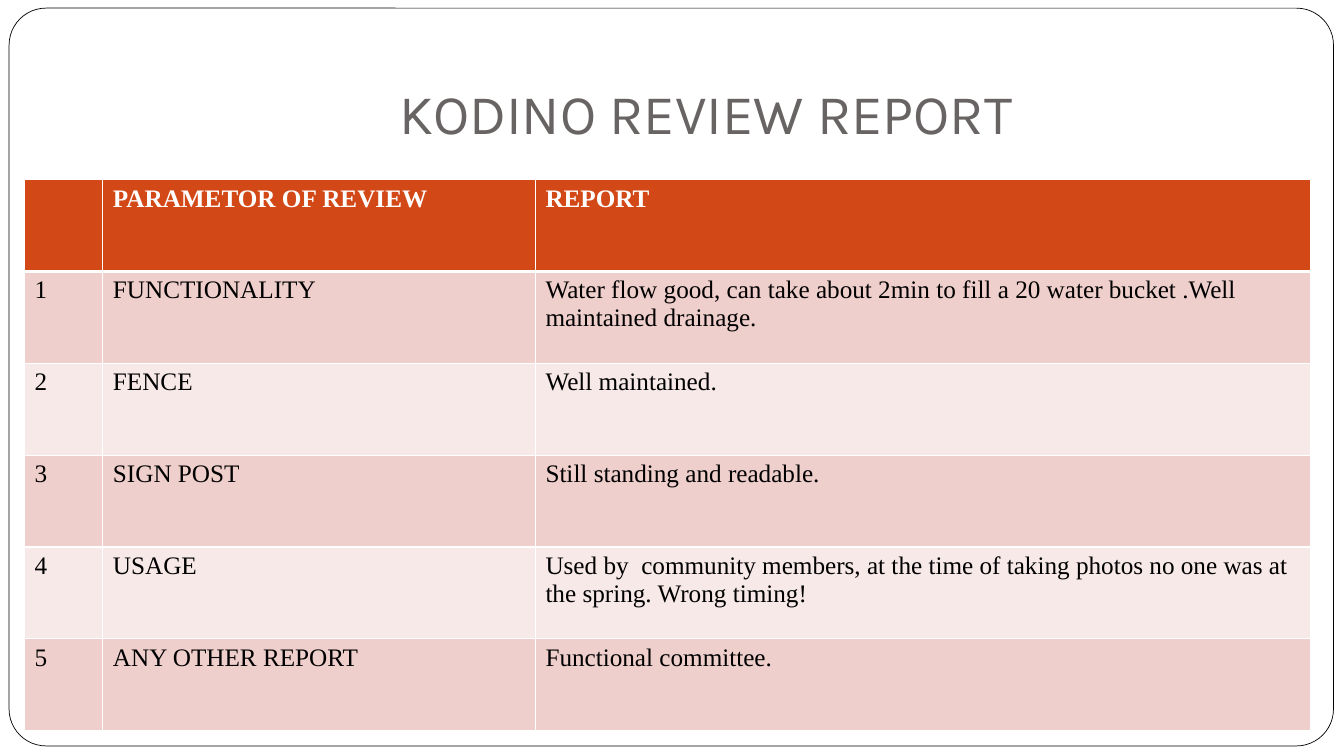
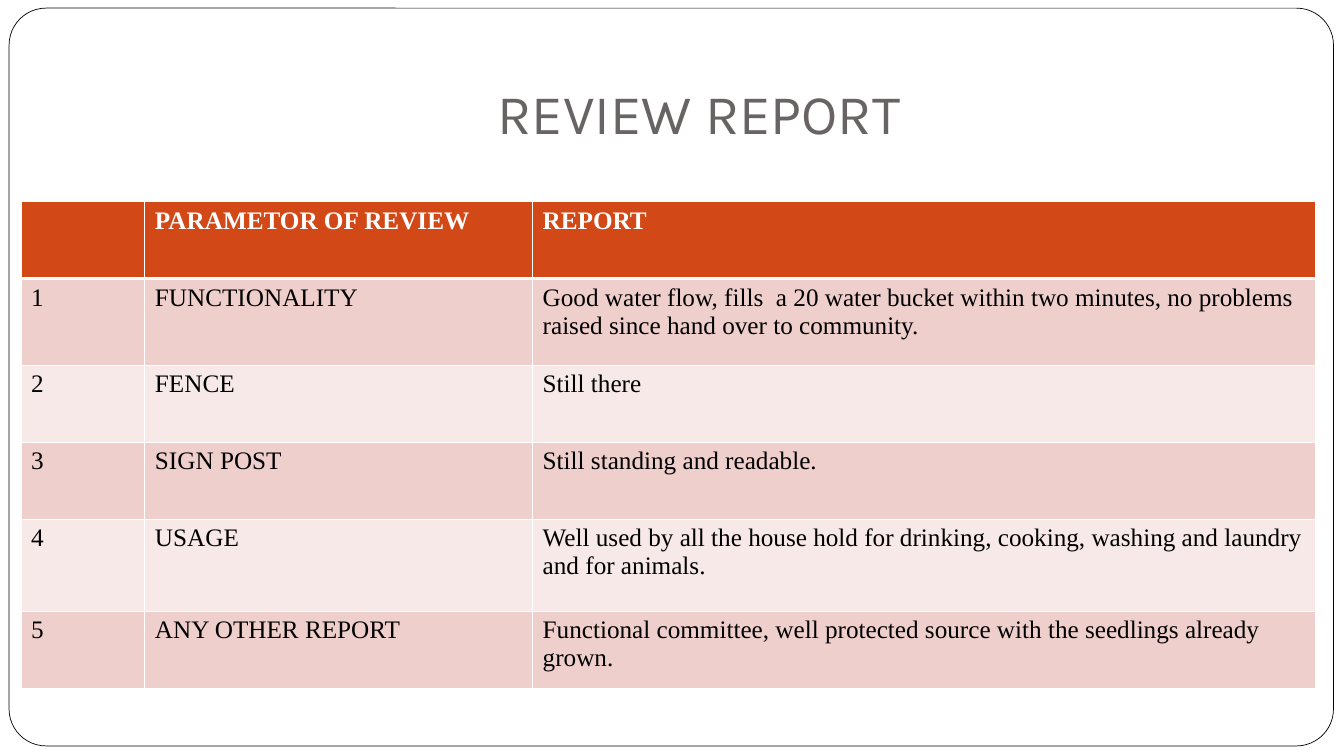
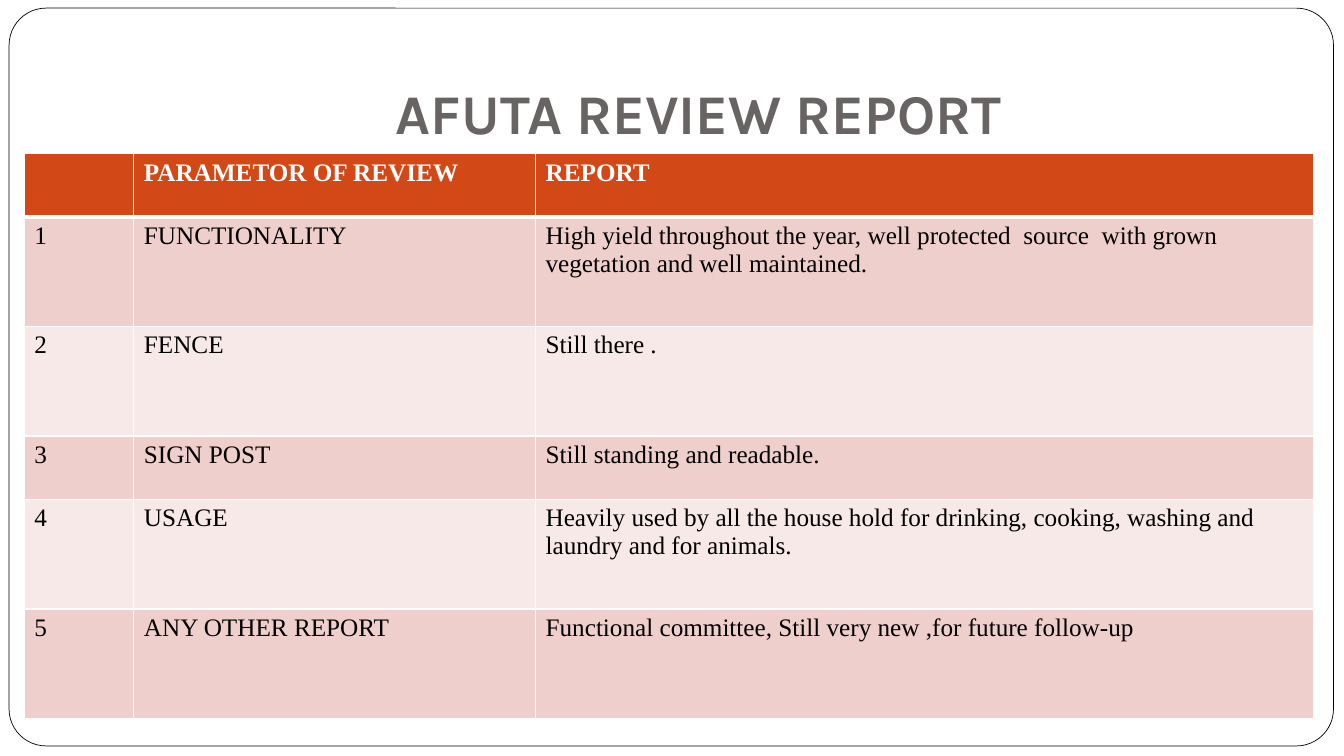
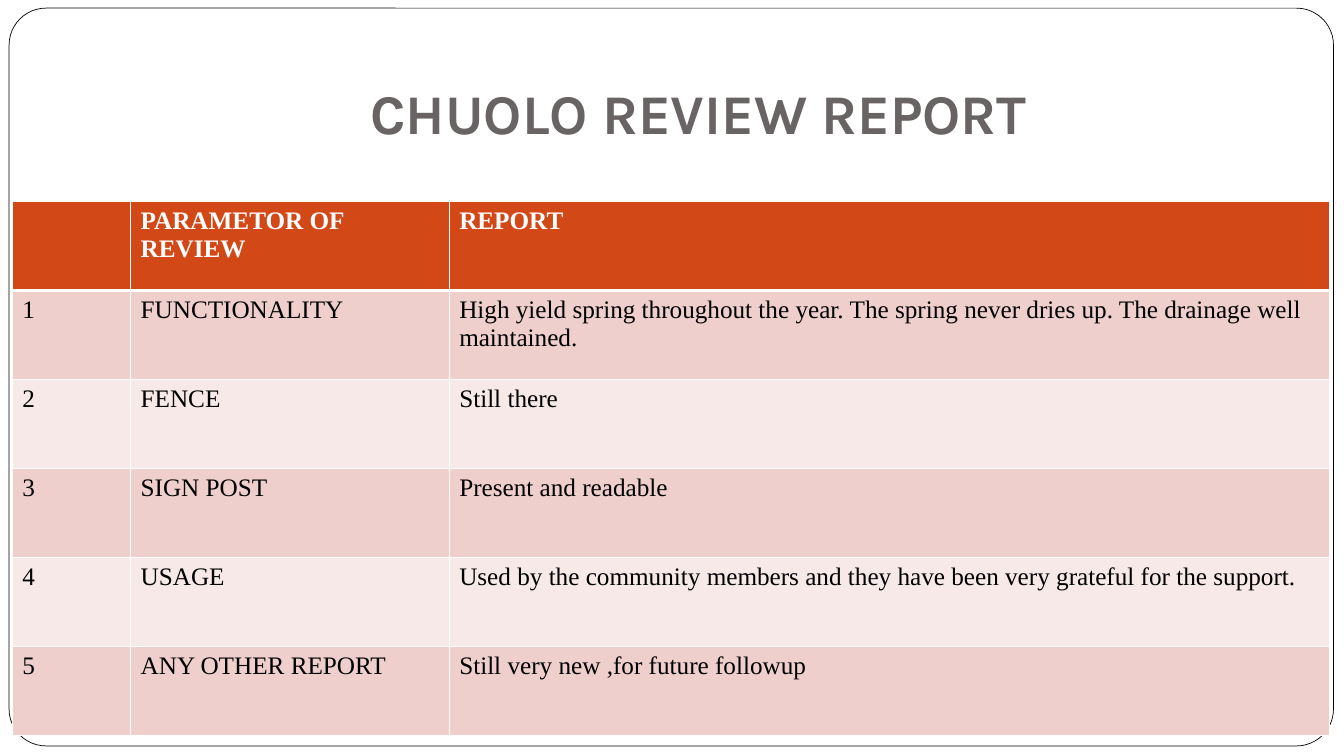
from dataclasses import dataclass

from lxml import etree
from pptx import Presentation
from pptx.dml.color import RGBColor
from pptx.enum import shapes, text
from pptx.oxml import ns
from pptx.util import Pt

WHITE = RGBColor(0xFF, 0xFF, 0xFF)
BLACK = RGBColor(0x00, 0x00, 0x00)
GREY = RGBColor(0x69, 0x64, 0x64)
RUST = RGBColor(0xD3, 0x48, 0x17)
ROSE = RGBColor(0xEF, 0xCF, 0xCC)
BLUSH = RGBColor(0xF7, 0xE9, 0xE8)

HEAD = ("", "PARAMETOR OF REVIEW", "REPORT")
TOPICS = ("FUNCTIONALITY", "FENCE", "SIGN POST", "USAGE", "ANY OTHER REPORT")
THIN, THICK = 1, 3


@dataclass(frozen=True)
class Review:
    title: str
    bold: bool
    left: float
    top: float
    cols: tuple[float, ...]
    rows: tuple[float, ...]
    notes: tuple[str, ...]


REVIEWS = (
    Review(
        "KODINO REVIEW REPORT", False, 17.5, 128.3,
        (56, 309, 553.5), (65.6,) * 6,
        (
            "Water flow good, can take about 2min to fill a 20 water bucket .Well maintained drainage.",
            "Well maintained.",
            "Still standing and readable.",
            "Used by  community members, at the time of taking photos no one was at the spring. Wrong timing!",
            "Functional committee.",
        ),
    ),
    Review(
        "REVIEW REPORT ", False, 15, 144,
        (88.5, 277, 559), (55, 62, 55, 55, 65.6, 55),
        (
            "Good water flow, fills  a 20 water bucket within two minutes, no problems raised since hand over to community.",
            "Still there",
            "Still standing and readable.",
            "Well used by all the house hold for drinking, cooking, washing and laundry and for animals.",
            "Functional committee, well protected source with the seedlings already grown.",
        ),
    ),
    Review(
        "AFUTA REVIEW REPORT ", True, 17.3, 109.7,
        (78.3, 287, 556), (45.2, 78.3, 78.3, 45.2, 78.3, 78.3),
        (
            "High yield throughout the year, well protected  source  with grown vegetation and well maintained.",
            "Still there .",
            "Still standing and readable.",
            "Heavily used by all the house hold for drinking, cooking, washing and laundry and for animals.",
            "Functional committee, Still very new ,for future follow-up",
        ),
    ),
    Review(
        "CHUOLO REVIEW REPORT ", True, 8.8, 144,
        (84.5, 227.6, 629), (63.6,) * 6,
        (
            "High yield spring throughout the year. The spring never dries up. The drainage well maintained.",
            "Still there",
            "Present and readable",
            "Used by the community members and they have been very grateful for the support.",
            "Still very new ,for future followup",
        ),
    ),
)


def add_run(para, words: str, font: str, size: float, color: RGBColor, bold: bool) -> None:
    run = para.add_run()
    run.text = words
    run.font.name = font
    run.font.size = Pt(size)
    run.font.bold = bold
    run.font.color.rgb = color


def set_layout(layout) -> None:
    """Place and format the title that every slide inherits."""
    title = next(p for p in layout.placeholders
                 if p.placeholder_format.type == shapes.PP_PLACEHOLDER.TITLE)
    title.left, title.top, title.width, title.height = map(Pt, (96, 21.6, 816, 90))
    frame = title.text_frame
    frame.vertical_anchor = text.MSO_ANCHOR.BOTTOM
    frame.auto_size = text.MSO_AUTO_SIZE.NONE
    frame.margin_left = frame.margin_right = frame.margin_bottom = Pt(7.2)
    frame.margin_top = Pt(3.6)


def add_frame(slide, layout) -> None:
    """Draw the rounded frame and move it to the back of the shared layout."""
    frame = slide.shapes.add_shape(
        shapes.MSO_SHAPE.ROUNDED_RECTANGLE, *map(Pt, (6.5, 5.8, 946, 527)))
    frame.adjustments[0] = 0.05
    frame.shadow.inherit = False
    frame.fill.solid()
    frame.fill.fore_color.rgb = WHITE
    frame.line.color.rgb = BLACK
    frame.line.width = Pt(0.5)
    layout.shapes.element.insert(2, frame.element)


def set_edges(cell, top: float, bottom: float) -> None:
    """Add white cell borders ahead of the fill."""
    props = cell._tc.get_or_add_tcPr()
    widths = {"a:lnL": THIN, "a:lnR": THIN, "a:lnT": top, "a:lnB": bottom}
    for spot, (tag, width) in enumerate(widths.items()):
        edge = etree.Element(ns.qn(tag), w=str(Pt(width)))
        fill = etree.SubElement(edge, ns.qn("a:solidFill"))
        etree.SubElement(fill, ns.qn("a:srgbClr"), val=str(WHITE))
        props.insert(spot, edge)


def fill_cell(cell, words: str, row: int) -> None:
    head = row == 0
    cell.fill.solid()
    cell.fill.fore_color.rgb = RUST if head else ROSE if row % 2 else BLUSH
    set_edges(cell, THICK if row == 1 else THIN, THICK if head else THIN)
    if words:
        add_run(cell.text_frame.paragraphs[0], words, "Times New Roman", 18,
                WHITE if head else BLACK, head)


def add_grid(slide, review: Review) -> None:
    grid = slide.shapes.add_table(
        len(review.rows), len(review.cols), Pt(review.left), Pt(review.top),
        Pt(sum(review.cols)), Pt(sum(review.rows))).table
    grid.horz_banding = False
    for col, width in zip(grid.columns, review.cols):
        col.width = Pt(width)
    for row, height in zip(grid.rows, review.rows):
        row.height = Pt(height)
    body = [(str(num), topic, note)
            for num, (topic, note) in enumerate(zip(TOPICS, review.notes), 1)]
    for row, line in enumerate([HEAD, *body]):
        for col, words in enumerate(line):
            fill_cell(grid.cell(row, col), words, row)


def add_review(deck, layout, review: Review):
    slide = deck.slides.add_slide(layout)
    para = slide.shapes.title.text_frame.paragraphs[0]
    para.alignment = text.PP_ALIGN.CENTER
    add_run(para, review.title, "Karla", 40, GREY, review.bold)
    add_grid(slide, review)
    return slide


def main() -> None:
    deck = Presentation()
    deck.slide_width, deck.slide_height = Pt(960), Pt(540)
    layout = deck.slide_layouts.get_by_name("Title Only")
    set_layout(layout)
    slides = [add_review(deck, layout, review) for review in REVIEWS]
    add_frame(slides[0], layout)
    deck.save("out.pptx")


if __name__ == "__main__":
    main()
